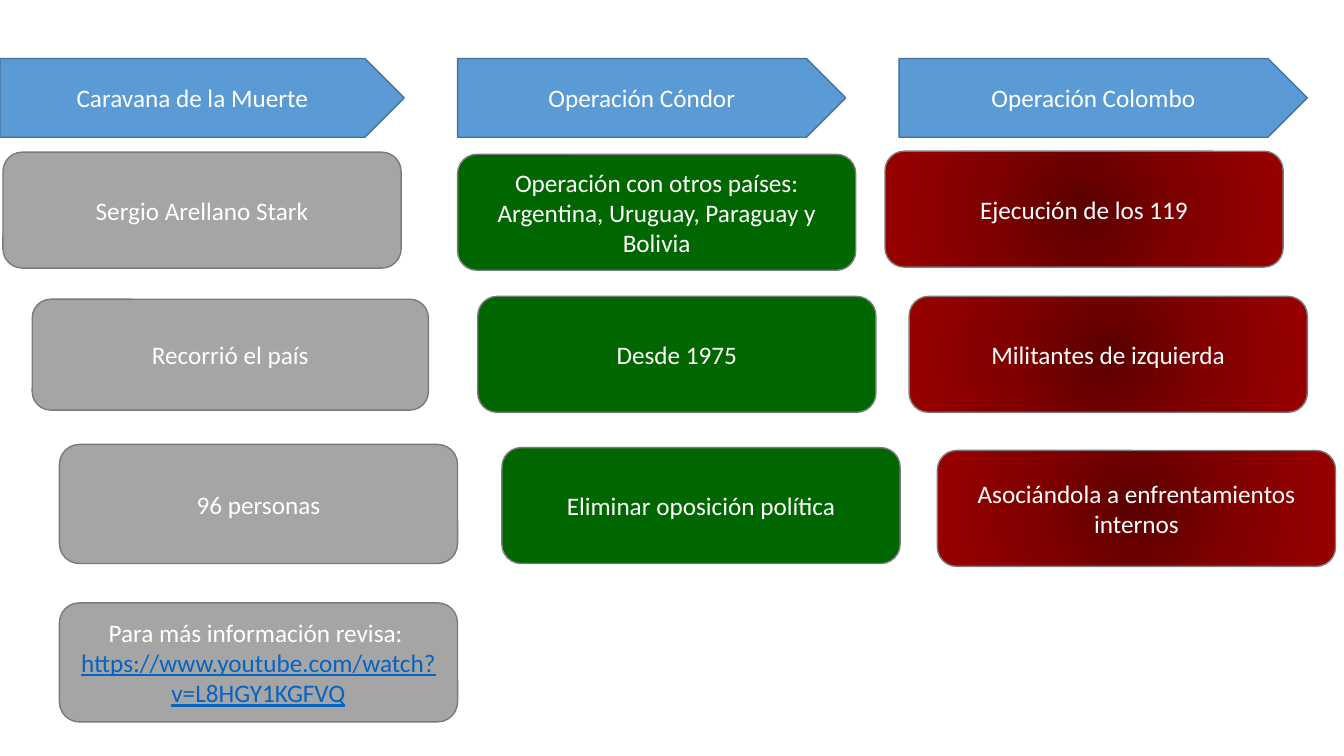
from dataclasses import dataclass

from pptx import Presentation, util as u
from pptx.dml.color import RGBColor
from pptx.enum import shapes, text
from pptx.oxml import parse_xml
from pptx.oxml.ns import nsdecls, qn


@dataclass(frozen=True)
class Theme:
    font: str = "Calibri"
    size: float = 18
    line_width: float = 1
    white: str = "FFFFFF"
    link: str = "0563C1"
    header: str = "5B9BD5"
    header_line: str = "43739E"
    card_line: str = "7A7A7A"
    gray: str = "A5A5A5"
    green: str = "006600"
    red: tuple = ("5B0000", "810000", "990000")


def write(paragraph, words, *, font, size, color, underline=None):
    paragraph.alignment = text.PP_ALIGN.CENTER
    run = paragraph.add_run()
    run.text = words
    run.font.name = font
    run.font.size = u.Pt(size)
    run.font.color.rgb = RGBColor.from_string(color)
    run.font.underline = underline


class SlideBuilder:
    COLUMNS, ROWS = 40, 24

    def __init__(self, presentation, theme):
        self.theme = theme
        self.slide = presentation.slides.add_slide(presentation.slide_layouts[6])
        self.column = presentation.slide_width / self.COLUMNS
        self.row = presentation.slide_height / self.ROWS

    def block(self, kind, left, top, width, height, fill, line, paragraphs):
        shape = self.slide.shapes.add_shape(
            kind, round(left * self.column), round(top * self.row),
            round(width * self.column), round(height * self.row))
        shape.shadow.inherit = False
        self.paint(shape, fill)
        shape.line.color.rgb = RGBColor.from_string(line)
        shape.line.width = u.Pt(self.theme.line_width)

        frame = shape.text_frame
        frame.word_wrap = True
        frame.vertical_anchor = text.MSO_ANCHOR.MIDDLE
        for index, words in enumerate(paragraphs):
            paragraph = frame.add_paragraph() if index else frame.paragraphs[0]
            is_link = words.startswith("https://")
            write(paragraph, words, font=self.theme.font, size=self.theme.size,
                  color=self.theme.link if is_link else self.theme.white,
                  underline=True if is_link else None)

    def paint(self, shape, fill):
        if isinstance(fill, str):
            shape.fill.solid()
            shape.fill.fore_color.rgb = RGBColor.from_string(fill)
            return
        # Radial gradient with evenly spaced stops
        shape.fill.gradient()
        step = 100000 // (len(fill) - 1)
        stops = "".join(f'<a:gs pos="{index * step}"><a:srgbClr val="{color}"/></a:gs>'
                        for index, color in enumerate(fill))
        properties = shape._element.spPr
        properties.replace(properties.find(qn("a:gradFill")), parse_xml(
            f'<a:gradFill {nsdecls("a")} rotWithShape="1"><a:gsLst>{stops}</a:gsLst>'
            '<a:path path="circle"><a:fillToRect l="50000" t="50000" r="50000" b="50000"/>'
            '</a:path></a:gradFill>'))

    def header(self, title, left, width):
        self.block(shapes.MSO_SHAPE.PENTAGON, left, 1.86, width, 2.5,
                   self.theme.header, self.theme.header_line, [title])

    def card(self, fill, left, top, *paragraphs, width=11.85, height=3.68):
        self.block(shapes.MSO_SHAPE.ROUNDED_RECTANGLE, left, top, width, height,
                   fill, self.theme.card_line, paragraphs)


def main():
    presentation = Presentation()
    presentation.slide_width, presentation.slide_height = u.Inches(13.33), u.Inches(7.5)
    theme = Theme()
    builder = SlideBuilder(presentation, theme)

    # Caravana de la Muerte
    builder.header("Caravana de la Muerte", 0, 12.03)
    builder.card(theme.gray, 0.09, 4.83, "Sergio Arellano Stark")
    builder.card(theme.gray, 0.96, 9.5, "Recorrió el país", width=11.79, height=3.52)
    builder.card(theme.gray, 1.77, 14.11, "96 personas", height=3.78)
    builder.card(theme.gray, 1.77, 19.14, "Para más información revisa: ",
                 "https://www.youtube.com/watch?v=L8HGY1KGFVQ", height=3.78)

    # Operación Cóndor
    builder.header("Operación Cóndor", 13.62, 11.55)
    builder.card(theme.green, 13.62, 4.9,
                 "Operación con otros países: Argentina, Uruguay, Paraguay y Bolivia")
    builder.card(theme.green, 14.22, 9.41, "Desde 1975")
    builder.card(theme.green, 14.94, 14.21, "Eliminar oposición política")

    # Operación Colombo
    builder.header("Operación Colombo", 26.76, 12.15)
    builder.card(theme.red, 26.34, 4.8, "Ejecución de los 119")
    builder.card(theme.red, 27.06, 9.41, "Militantes de izquierda")
    builder.card(theme.red, 27.9, 14.3, "Asociándola a enfrentamientos internos")

    presentation.save("out.pptx")


if __name__ == "__main__":
    main()
